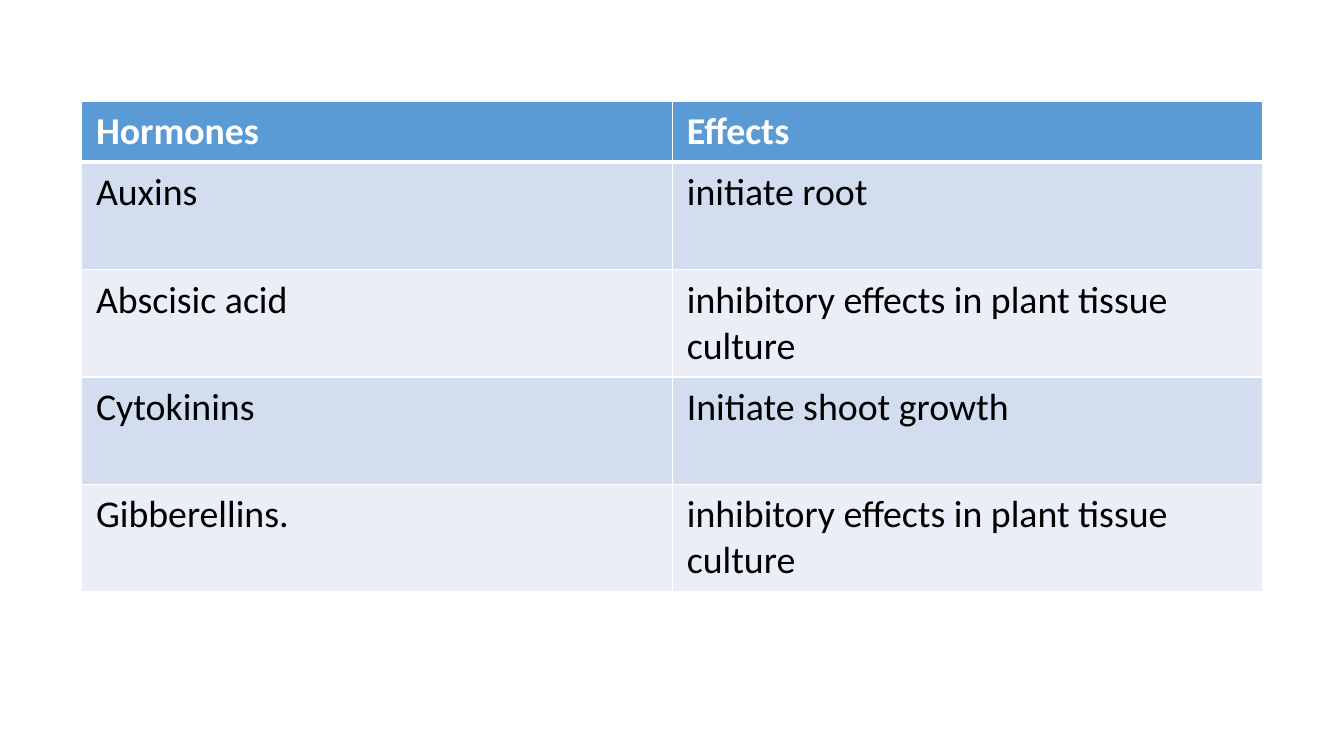
from lxml import etree
from pptx import Presentation
from pptx import util as u
from pptx.dml.color import RGBColor
from pptx.oxml import ns

ROWS = [
    ("Hormones", "Effects"),
    ("Auxins", "initiate root"),
    ("Abscisic acid", "inhibitory effects in plant tissue culture"),
    ("Cytokinins", "Initiate shoot growth"),
    ("Gibberellins.", "inhibitory effects in plant tissue culture"),
]
HEAD, DARK, LIGHT, WHITE, BLACK = "5B9BD5", "D2DEEF", "EAEFF7", "FFFFFF", "000000"


def paint(item, tint):
    item.rgb = RGBColor.from_string(tint)


def write(frame, words, size=27, tint=BLACK, bold=False, face="Calibri"):
    run = frame.paragraphs[0].add_run()
    run.text = words
    run.font.name, run.font.size, run.font.bold = face, u.Pt(size), bold
    paint(run.font.color, tint)


def edge(cell, side, width):
    props = cell._tc.get_or_add_tcPr()
    line = etree.SubElement(props, ns.qn(f"a:ln{side}"), w=str(u.Pt(width)))
    fill = etree.SubElement(line, ns.qn("a:solidFill"))
    etree.SubElement(fill, ns.qn("a:srgbClr"), val=WHITE)


def style(cell, row):
    cell.margin_left = cell.margin_right = u.Cm(0.37)
    cell.margin_top = cell.margin_bottom = u.Cm(0.19)
    for side in "LRTB":
        thick = (row, side) in ((0, "B"), (1, "T"))
        edge(cell, side, 3 if thick else 1)
    cell.fill.solid()
    paint(cell.fill.fore_color, HEAD if row == 0 else DARK if row % 2 else LIGHT)


def grid(slide, left, top, width, height, head=1.52):
    count = len(ROWS)
    box = [u.Cm(side) for side in (left, top, width, height)]
    table = slide.shapes.add_table(count, len(ROWS[0]), *box).table
    for col in table.columns:
        col.width = u.Cm(width / len(ROWS[0]))
    for row, words in enumerate(ROWS):
        table.rows[row].height = u.Cm((height - head) / (count - 1) if row else head)
        for col, word in enumerate(words):
            cell = table.cell(row, col)
            style(cell, row)
            write(cell.text_frame, word, tint=BLACK if row else WHITE, bold=row == 0)


def main():
    deck = Presentation()
    deck.slide_width, deck.slide_height = u.Cm(33.87), u.Cm(19.05)
    slide = deck.slides.add_slide(deck.slide_layouts[6])
    grid(slide, 2.05, 2.55, 29.78, 12.34)
    deck.save("out.pptx")


if __name__ == "__main__":
    main()
